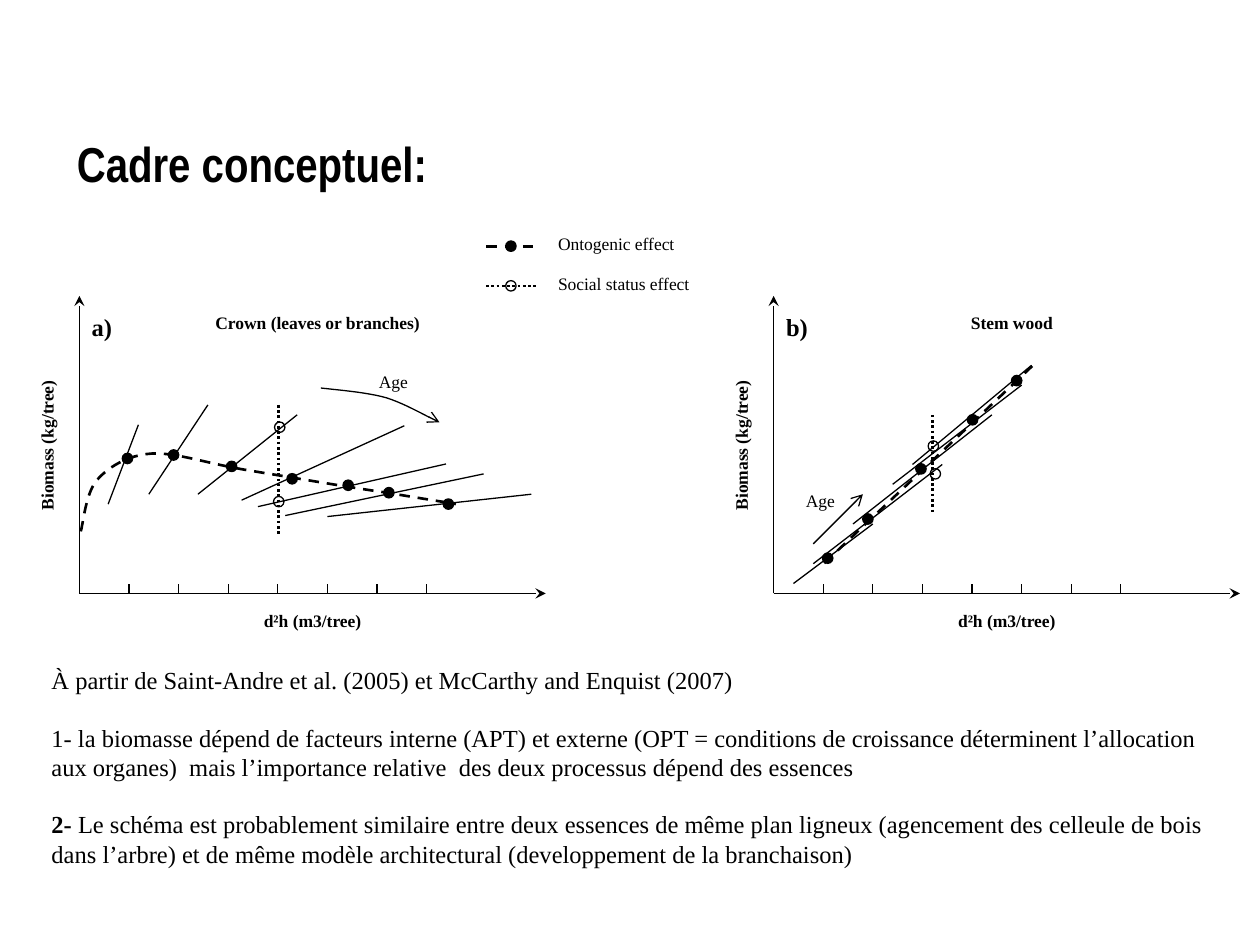
from lxml import etree
from pptx import Presentation
from pptx.dml.color import RGBColor
from pptx.enum.dml import MSO_LINE
from pptx.enum.shapes import MSO_CONNECTOR, MSO_SHAPE
from pptx.enum.text import MSO_ANCHOR, PP_ALIGN
from pptx.oxml.ns import qn
from pptx.util import Cm, Inches, Pt

BLACK = RGBColor(0, 0, 0)
SERIF, TITLE_FONT = "Times New Roman", "Arial Narrow"
STRAIGHT, OVAL = MSO_CONNECTOR.STRAIGHT, MSO_SHAPE.OVAL
DASH, DOTS = MSO_LINE.DASH, MSO_LINE.ROUND_DOT
LEFT, CENTER = PP_ALIGN.LEFT, PP_ALIGN.CENTER

# One grid unit is the gap between two ticks; rows count upwards from the x axis.
UNIT = Cm(1)
BASELINE = Inches(4.71)
CROWN_X, STEM_X = Inches(0.63), Inches(6.14)
AXIS_COLS, AXIS_ROWS, TICKS = 9.4, 6, 7
LABEL_ROWS = 0.69
DOT_SIZE = 0.21
CURVE_STEPS = 12

CROWN = dict(
    origin=CROWN_X, tag="a)", title="Crown (leaves or branches)", age_at=(5.79, 4.6),
    trends=[((0.58, 1.8), (1.19, 3.4)), ((1.4, 2), (2.59, 3.8)),
            ((2.39, 2), (4.39, 3.6)), ((3.27, 1.88), (6.55, 3.38)),
            ((3.6, 1.75), (7.39, 2.61)), ((4.15, 1.57), (8.15, 2.41)),
            ((5, 1.55), (9.11, 2))],
    social=((4.02, 3.8), (4.02, 1.2)),
    stages=[(0.97, 2.72), (1.9, 2.79), (3.07, 2.56), (4.29, 2.31),
            (5.42, 2.18), (6.24, 2.03), (7.44, 1.8)],
    statuses=[(4.04, 3.35), (4.02, 1.85)])
CROWN_ONTOGENY = [
    (0.03, 1.25), (0.08, 1.42), (0.13, 2.03), (0.36, 2.29),
    (0.58, 2.54), (0.97, 2.79), (1.47, 2.82), (1.96, 2.84),
    (2.57, 2.62), (3.35, 2.49), (4.14, 2.36), (5.49, 2.13),
    (6.2, 2.03), (6.91, 1.91), (7.44, 1.83), (7.59, 1.8)]
CROWN_AGE = [(4.87, 4.14), (5.1, 4.11), (5.79, 4.06), (6.2, 3.94),
             (6.6, 3.81), (7.03, 3.55), (7.26, 3.45)]
STEM = dict(
    origin=STEM_X, tag="b)", title="Stem wood", age_at=(0.4, 2.2),
    trends=[((0.4, 0.2), (2, 1.4)), ((0.8, 0.6), (3.4, 2.6)),
            ((1.6, 1.4), (4.4, 3.6)), ((2.4, 2.2), (5, 4.2)),
            ((2.8, 2.6), (5.2, 4.6))],
    social=((3.2, 3.6), (3.2, 1.6)),
    stages=[(1.09, 0.71), (1.9, 1.5), (2.97, 2.51), (4.01, 3.5), (4.9, 4.29)],
    statuses=[(3.22, 2.97), (3.26, 2.41)])
STEM_ONTOGENY = ((1.02, 0.61), (5.23, 4.6))
STEM_AGE = ((0.8, 1), (1.8, 2))

NOTES = [
    [("À partir de Saint-Andre et al. (2005) et McCarthy and Enquist (2007)", False)],
    [("1- la biomasse dépend de facteurs interne (APT) et externe (OPT = conditions de "
      "croissance déterminent l’allocation aux organes)  mais l’importance relative  "
      "des deux processus dépend des essences", False)],
    [("2- ", True),
     ("Le schéma est probablement similaire entre deux essences de même plan ligneux "
      "(agencement des celleule de bois dans l’arbre) et de même modèle architectural "
      "(developpement de la branchaison)", False)],
]


def place(origin, point):
    col, row = point
    return round(origin + col * UNIT), round(BASELINE - row * UNIT)


def style_line(line, dash=None, arrow=None):
    line.color.rgb = BLACK
    line.width = Pt(1.5 if dash else 0.75)
    if dash:
        line.dash_style = dash
    if arrow:
        etree.SubElement(line._get_or_add_ln(), qn("a:tailEnd"), type=arrow)


def style_font(font, size, bold=False, name=SERIF):
    font.name, font.size, font.bold = name, Pt(size), bold
    font.color.rgb = BLACK


def add_line(slide, origin, ends, dash=None, arrow=None):
    start, end = (place(origin, point) for point in ends)
    connector = slide.shapes.add_connector(STRAIGHT, *start, *end)
    style_line(connector.line, dash, arrow)
    etree.SubElement(connector._element.spPr, qn("a:effectLst"))


def add_curve(slide, origin, knots, dash=None, arrow=None):
    """Draw chained cubic Bézier arcs as one open outline."""
    points = [place(origin, knots[0])]
    for first in range(0, len(knots) - 1, 3):
        arc = knots[first:first + 4]
        for step in range(1, CURVE_STEPS + 1):
            t = step / CURVE_STEPS
            weights = ((1 - t) ** 3, 3 * t * (1 - t) ** 2, 3 * t * t * (1 - t), t ** 3)
            points.append(place(origin, [sum(w * knot[axis] for w, knot in zip(weights, arc))
                                         for axis in (0, 1)]))
    builder = slide.shapes.build_freeform(*points[0])
    builder.add_line_segments(points[1:], close=False)
    curve = builder.convert_to_shape()
    curve.shadow.inherit = False
    curve.fill.background()
    style_line(curve.line, dash, arrow)


def add_dot(slide, origin, center, filled):
    x, y = place(origin, center)
    size = round(DOT_SIZE * UNIT)
    dot = slide.shapes.add_shape(OVAL, x - size // 2, y - size // 2, size, size)
    dot.shadow.inherit = False
    if filled:
        dot.fill.solid()
        dot.fill.fore_color.rgb = BLACK
    else:
        dot.fill.background()
    style_line(dot.line)


def add_label(slide, origin, corner, cols, text, size=10, bold=False, align=CENTER):
    box = slide.shapes.add_textbox(*place(origin, corner), round(cols * UNIT),
                                   round(LABEL_ROWS * UNIT))
    box.text_frame.word_wrap = True
    paragraph = box.text_frame.paragraphs[0]
    paragraph.text = text
    paragraph.alignment = align
    style_font(paragraph.font, size, bold)
    return box


def add_panel(slide, origin, tag, title, age_at, trends, social, stages, statuses):
    add_line(slide, origin, ((0, 0), (0, AXIS_ROWS)), arrow="stealth")
    add_line(slide, origin, ((0, 0), (AXIS_COLS, 0)), arrow="stealth")
    for tick in range(1, TICKS + 1):
        add_line(slide, origin, ((tick, 0), (tick, 0.2)))
    for trend in trends:
        add_line(slide, origin, trend)
    add_line(slide, origin, social, DOTS)
    for stage in stages:
        add_dot(slide, origin, stage, True)
    for status in statuses:
        add_dot(slide, origin, status, False)
    add_label(slide, origin, (0, 5.8), 9.6, title, bold=True)
    add_label(slide, origin, (0, -0.2), AXIS_COLS, "d²h (m3/tree)", bold=True)
    y_label = add_label(slide, origin, (-3.65, 3.33), AXIS_ROWS, "Biomass (kg/tree)", bold=True)
    y_label.rotation = 270
    add_label(slide, origin, (0, 5.8), 1, tag, size=14, bold=True, align=LEFT)
    add_label(slide, origin, age_at, 1.8, "Age", align=LEFT)


def add_legend(slide):
    entries = [("Ontogenic effect", DASH, True), ("Social status effect", DOTS, False)]
    for index, (text, dash, filled) in enumerate(entries):
        row = 7 - 0.8 * index
        add_line(slide, CROWN_X, ((8.2, row), (9.2, row)), dash)
        add_dot(slide, CROWN_X, (8.7, row), filled)
        add_label(slide, CROWN_X, (9.4, row + 0.39), 3.6, text, align=LEFT)


def add_notes_text(slide):
    frame = slide.shapes.add_textbox(Inches(0.31), Inches(5.23),
                                     Inches(9.38), Inches(1.75)).text_frame
    frame.word_wrap = True
    for index, pieces in enumerate(NOTES):
        paragraph = frame.add_paragraph() if index else frame.paragraphs[0]
        if index:
            paragraph.space_before = Pt(16)
        style_font(paragraph.font, 14)
        for text, bold in pieces:
            run = paragraph.add_run()
            run.text = text
            if bold:
                run.font.bold = True


def set_title(slide):
    title = slide.shapes.title
    title.left, title.top = Inches(0.51), Inches(0.96)
    title.width, title.height = Inches(8.35), Inches(0.67)
    title.text_frame.text = "Cadre conceptuel:"
    title.text_frame.vertical_anchor = MSO_ANCHOR.MIDDLE
    paragraph = title.text_frame.paragraphs[0]
    paragraph.alignment = LEFT
    style_font(paragraph.font, 28, True, TITLE_FONT)


def main():
    deck = Presentation()
    deck.slide_width, deck.slide_height = Inches(10), Inches(7.5)
    slide = deck.slides.add_slide(deck.slide_layouts[5])
    set_title(slide)
    add_curve(slide, CROWN_X, CROWN_ONTOGENY, DASH)
    add_curve(slide, CROWN_X, CROWN_AGE, arrow="arrow")
    add_panel(slide, **CROWN)
    add_line(slide, STEM_X, STEM_ONTOGENY, DASH)
    add_line(slide, STEM_X, STEM_AGE, arrow="arrow")
    add_panel(slide, **STEM)
    add_legend(slide)
    add_notes_text(slide)
    deck.save("out.pptx")


if __name__ == "__main__":
    main()
